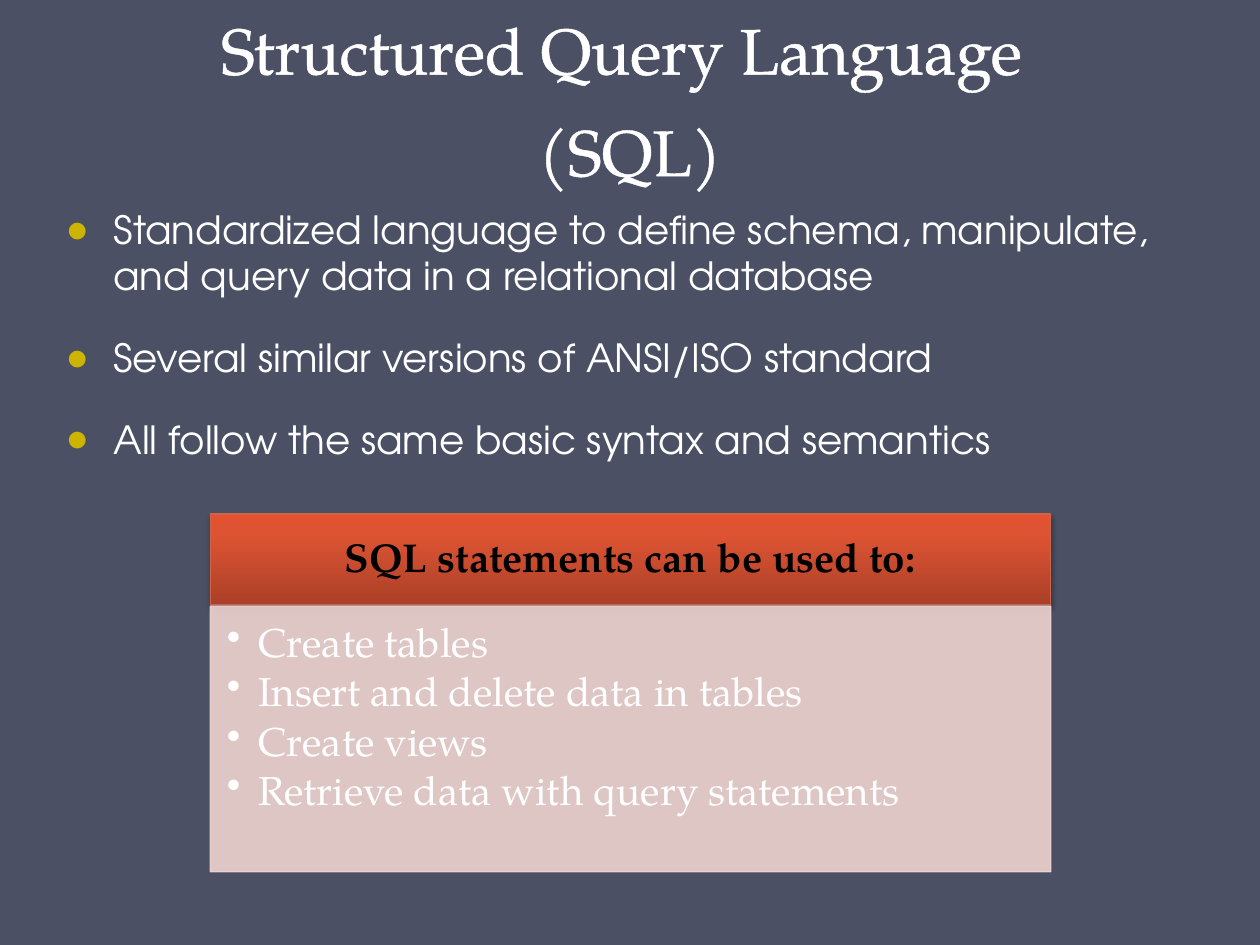
"""Build the slide that introduces Structured Query Language."""
import dataclasses

import pptx
import pptx.dml.color
import pptx.enum.shapes
import pptx.enum.text
import pptx.oxml
import pptx.oxml.ns
import pptx.util

Inches = pptx.util.Inches
Pt = pptx.util.Pt
ALIGN = pptx.enum.text.PP_ALIGN
ANCHOR = pptx.enum.text.MSO_ANCHOR


@dataclasses.dataclass(frozen=True)
class Theme:
    background: str = "4B5064"
    text: str = "FFFFFF"
    header_text: str = "000000"
    bullet: str = "CCB400"
    header_line: str = "D16349"
    header_stops: tuple = ((0, "AB4027"), (80, "DE5433"), (100, "E35230"))
    panel: str = "EED3D0"
    serif: str = "TeX Gyre Pagella"
    sans: str = "TeX Gyre Adventor"
    title_size: float = 36.9
    body_size: float = 22.2
    panel_size: float = 23


THEME = Theme()
POINTS = (
    "Standardized language to define schema, manipulate, and query data in a relational database",
    "Several similar versions of ANSI/ISO standard",
    "All follow the same basic syntax and semantics",
)
USES = (
    "Create tables",
    "Insert and delete data in tables",
    "Create views",
    "Retrieve data with query statements",
)


def rgb(value):
    return pptx.dml.color.RGBColor.from_string(value)


def element(markup):
    tag, rest = markup.split(None, 1) if " " in markup.split(">")[0] else (markup.split(">")[0], None)
    namespace = pptx.oxml.ns.nsdecls("a")
    tail = " " + rest if rest else markup[len(tag):]
    return pptx.oxml.parse_xml(f"{tag} {namespace}{tail}")


def place(shape, left, top, width, height):
    shape.left, shape.top = Inches(left), Inches(top)
    shape.width, shape.height = Inches(width), Inches(height)


def set_frame(frame, anchor, insets):
    frame.word_wrap = True
    frame.auto_size = pptx.enum.text.MSO_AUTO_SIZE.NONE
    frame.vertical_anchor = anchor
    frame.margin_left, frame.margin_top, frame.margin_right, frame.margin_bottom = map(Inches, insets)


def set_font(paragraph, name, size, color, bold=False):
    font = paragraph.font
    font.name, font.size, font.bold = name, Pt(size), bold
    font.color.rgb = rgb(color)


def add_bullets(frame, items, mark, mark_color, indent, font, size, before=0, after=0, spacing=1.0):
    for index, item in enumerate(items):
        paragraph = frame.paragraphs[0] if index == 0 else frame.add_paragraph()
        paragraph.text = item
        paragraph.level = 1
        paragraph.alignment = ALIGN.LEFT
        properties = paragraph._p.get_or_add_pPr()
        properties.set("marL", str(Inches(indent)))
        properties.set("indent", str(-Inches(indent)))
        properties.append(element(f'<a:buClr><a:srgbClr val="{mark_color}"/></a:buClr>'))
        properties.append(element(f'<a:buChar char="{mark}"/>'))
        paragraph.line_spacing = spacing
        paragraph.space_before = Pt(before if index else 0)
        paragraph.space_after = Pt(after)
        set_font(paragraph, font, size, THEME.text)


def add_title(slide):
    title = slide.shapes.title
    place(title, 0, 0.29, 10, 1.26)
    set_frame(title.text_frame, ANCHOR.BOTTOM, (0.1, 0.05, 0.1, 0.05))
    title.text_frame.text = "Structured Query Language \v(SQL)"
    heading = title.text_frame.paragraphs[0]
    heading.alignment = ALIGN.CENTER
    heading.line_spacing = Pt(58)
    set_font(heading, THEME.serif, THEME.title_size, THEME.text)
    outline = f'<a:ln w="{Pt(1.45)}"><a:solidFill><a:srgbClr val="{THEME.text}"/></a:solidFill></a:ln>'
    heading._p.pPr.find(pptx.oxml.ns.qn("a:defRPr")).insert(0, element(outline))


def add_points(slide):
    points = slide.placeholders[1]
    place(points, 0.42, 1.58, 9.08, 2.42)
    set_frame(points.text_frame, ANCHOR.TOP, (0.1, 0.05, 0.1, 0.05))
    add_bullets(points.text_frame, POINTS, "●", THEME.bullet, 0.38,
                THEME.sans, THEME.body_size, before=20)


def add_panel(slide, top, height, fill, line):
    panel = slide.shapes.add_shape(pptx.enum.shapes.MSO_SHAPE.RECTANGLE,
                                   Inches(1.67), Inches(top), Inches(6.67), Inches(height))
    panel.shadow.inherit = False
    panel.fill.solid()
    panel.fill.fore_color.rgb = rgb(fill)
    panel.line.color.rgb = rgb(line)
    panel.line.width = Pt(0.75)
    return panel


def add_header(slide):
    header = add_panel(slide, 4.08, 0.72, THEME.header_stops[0][1], THEME.header_line)
    properties = header._element.spPr
    stops = "".join(f'<a:gs pos="{position * 1000}"><a:srgbClr val="{color}"/></a:gs>'
                    for position, color in THEME.header_stops)
    gradient = element(f'<a:gradFill rotWithShape="1"><a:gsLst>{stops}</a:gsLst>'
                       '<a:lin ang="16200000" scaled="0"/></a:gradFill>')
    properties.replace(properties.find(pptx.oxml.ns.qn("a:solidFill")), gradient)
    properties.find(pptx.oxml.ns.qn("a:effectLst")).append(element(
        f'<a:outerShdw blurRad="{Pt(3.1)}" dist="{Pt(1.8)}" dir="5400000" rotWithShape="0">'
        '<a:srgbClr val="000000"><a:alpha val="35000"/></a:srgbClr></a:outerShdw>'))
    set_frame(header.text_frame, ANCHOR.MIDDLE, (0.18, 0.1, 0.18, 0.1))
    header.text_frame.text = "SQL statements can be used to:"
    caption = header.text_frame.paragraphs[0]
    caption.alignment = ALIGN.CENTER
    caption.line_spacing = 0.9
    set_font(caption, THEME.serif, THEME.panel_size, THEME.header_text, bold=True)


def add_uses(slide):
    uses = add_panel(slide, 4.81, 2.11, THEME.panel, THEME.panel)
    for color in uses._element.spPr.iter(pptx.oxml.ns.qn("a:srgbClr")):
        color.append(element('<a:alpha val="90000"/>'))
    set_frame(uses.text_frame, ANCHOR.TOP, (0.13, 0.13, 0.18, 0.2))
    add_bullets(uses.text_frame, USES, "•", THEME.text, 0.25,
                THEME.serif, THEME.panel_size, after=3.5, spacing=0.9)


def main():
    deck = pptx.Presentation()
    deck.slide_width, deck.slide_height = Inches(10), Inches(7.5)
    slide = deck.slides.add_slide(deck.slide_layouts[1])
    slide.background.fill.solid()
    slide.background.fill.fore_color.rgb = rgb(THEME.background)
    add_title(slide)
    add_points(slide)
    add_header(slide)
    add_uses(slide)
    deck.save("out.pptx")


if __name__ == "__main__":
    main()
